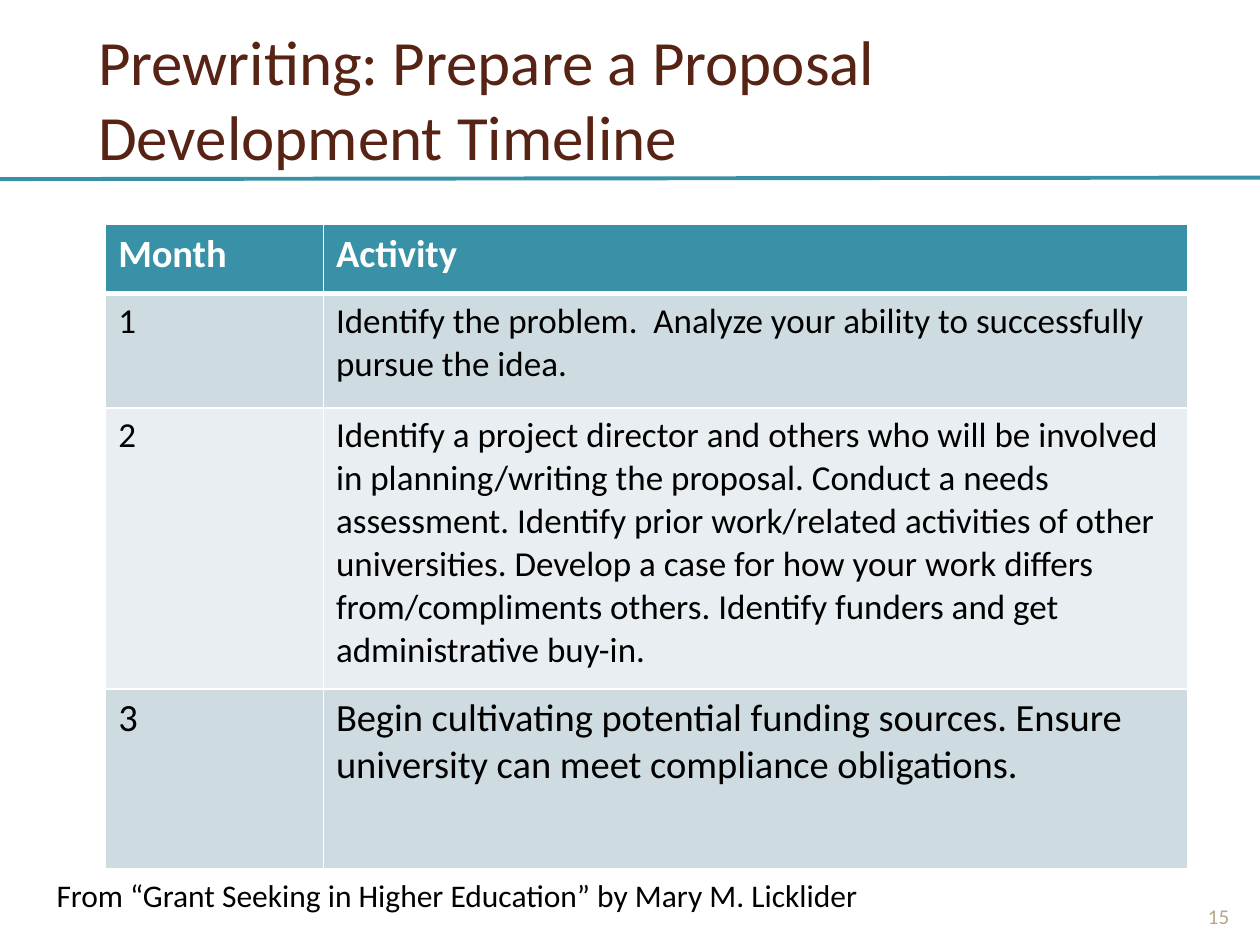
from lxml import etree
from pptx import Presentation
from pptx import util as u
from pptx.dml.color import RGBColor
from pptx.enum import shapes, text
from pptx.oxml import ns

TEAL, BROWN, TAN = "3891A7", "572314", "B5A788"
BLACK, WHITE = "000000", "FFFFFF"
BANDS = ("CEDCE1", "E8EEF1")

COLUMN_WIDTHS = (4.39, 17.42)
ROW_HEIGHTS = (1.4, 2.31, 5.66, 3.63)
TEXT_SIZES = (22, 20, 20, 22)
TIMELINE = (
    ("Month", "Activity"),
    ("1", "Identify the problem.  Analyze your ability to successfully pursue the idea."),
    ("2", "Identify a project director and others who will be involved in "
          "planning/writing the proposal. Conduct a needs assessment. Identify prior "
          "work/related activities of other universities. Develop a case for how your "
          "work differs from/compliments others. Identify funders and get "
          "administrative buy-in."),
    ("3", "Begin cultivating potential funding sources. Ensure university can meet "
          "compliance obligations."),
)


def color(value):
    return RGBColor.from_string(value)


class SlideBuilder:
    font = "Calibri"

    def __init__(self, slide):
        self.slide = slide

    def set_text(self, frame, content, size, fill, bold=False, align=text.PP_ALIGN.LEFT):
        frame.text = content
        for paragraph in frame.paragraphs:
            paragraph.alignment = align
            for run in paragraph.runs:
                run.font.name = self.font
                run.font.size = u.Pt(size)
                run.font.bold = bold
                run.font.color.rgb = color(fill)

    def text_box(self, box, content, size, fill, anchor=text.MSO_ANCHOR.TOP,
                 align=text.PP_ALIGN.LEFT):
        shape = self.slide.shapes.add_textbox(*map(u.Cm, box))
        frame = shape.text_frame
        frame.word_wrap = True
        frame.vertical_anchor = anchor
        self.set_text(frame, content, size, fill, align=align)

    def line(self, ends, fill, width):
        connector = self.slide.shapes.add_connector(
            shapes.MSO_CONNECTOR.STRAIGHT, *map(u.Cm, ends))
        connector.line.color.rgb = color(fill)
        connector.line.width = u.Pt(width)
        etree.SubElement(connector._element.spPr, ns.qn("a:effectLst"))

    def cell_borders(self, cell, fill, widths):
        """Draw the left, right, top and bottom borders; call before filling the cell."""
        properties = cell._tc.get_or_add_tcPr()
        for side, width in zip("LRTB", widths):
            border = etree.SubElement(properties, ns.qn(f"a:ln{side}"), w=str(u.Pt(width)))
            solid = etree.SubElement(border, ns.qn("a:solidFill"))
            etree.SubElement(solid, ns.qn("a:srgbClr"), val=fill)

    def table(self, left, top, rows, column_widths, row_heights, sizes):
        box = (left, top, sum(column_widths), sum(row_heights))
        table = self.slide.shapes.add_table(
            len(rows), len(column_widths), *map(u.Cm, box)).table
        for column, width in zip(table.columns, column_widths):
            column.width = u.Cm(width)
        for index, (row, height) in enumerate(zip(table.rows, row_heights)):
            row.height = u.Cm(height)
            header = index == 0
            widths = (1, 1, 3 if index == 1 else 1, 3 if header else 1)
            for cell, content in zip(row.cells, rows[index]):
                self.cell_borders(cell, WHITE, widths)
                cell.fill.solid()
                cell.fill.fore_color.rgb = color(TEAL if header else BANDS[(index - 1) % 2])
                self.set_text(cell.text_frame, content, sizes[index],
                              WHITE if header else BLACK, bold=header)


def main():
    presentation = Presentation()
    presentation.slide_width = u.Cm(25.4)
    presentation.slide_height = u.Cm(19.05)
    builder = SlideBuilder(presentation.slides.add_slide(presentation.slide_layouts[6]))

    builder.line((0, 3.61, 25.4, 3.58), TEAL, 2.25)
    builder.text_box((1.73, 0, 22.2, 3.94),
                     "Prewriting: Prepare a Proposal Development Timeline",
                     36, BROWN, text.MSO_ANCHOR.MIDDLE)
    builder.table(2.13, 4.52, TIMELINE, COLUMN_WIDTHS, ROW_HEIGHTS, TEXT_SIZES)
    builder.text_box((0.89, 17.53, 21.79, 1.02),
                     "From “Grant Seeking in Higher Education” by Mary M. Licklider",
                     18, BLACK)
    builder.text_box((23.93, 17.53, 1.27, 1.32), "15", 12, TAN,
                     text.MSO_ANCHOR.BOTTOM, text.PP_ALIGN.CENTER)
    presentation.save("out.pptx")


if __name__ == "__main__":
    main()
